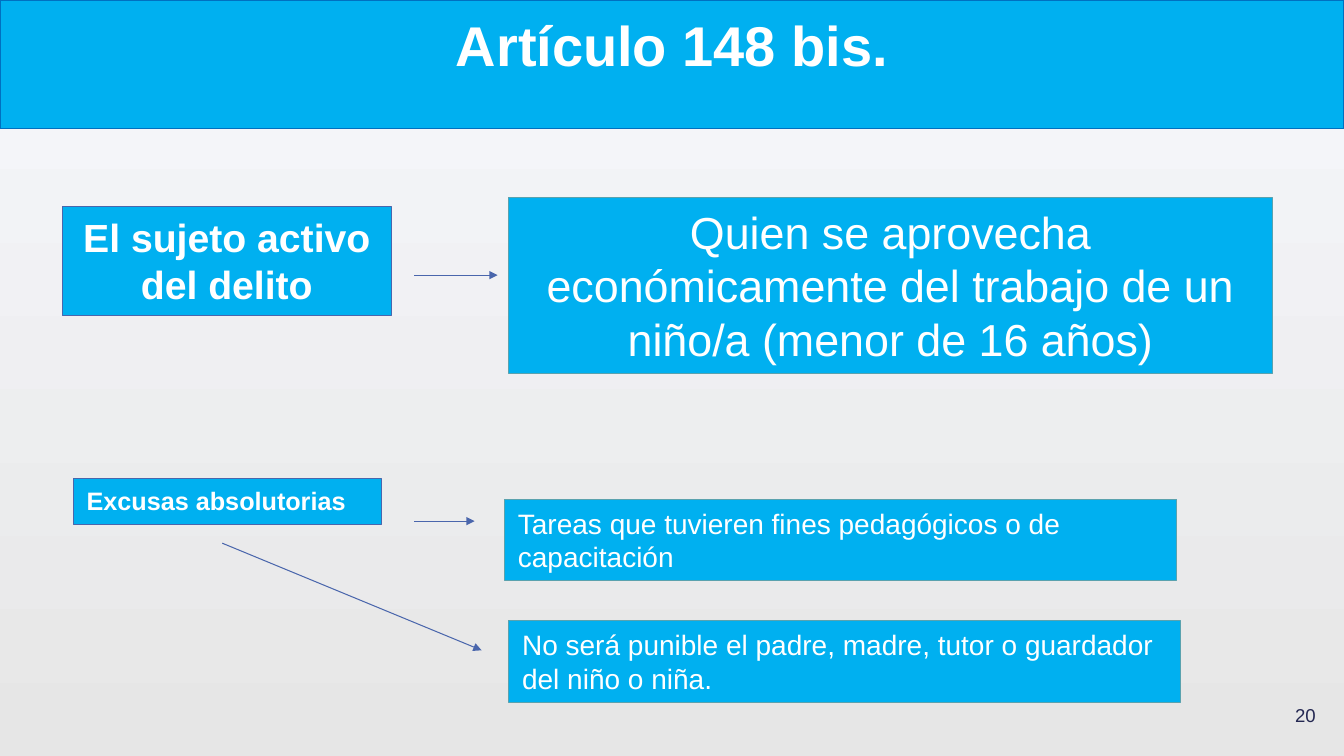
from lxml import etree
from pptx import Presentation
from pptx.dml.color import RGBColor
from pptx.enum import shapes, text
from pptx.oxml import ns
from pptx.util import Pt

COLORS = {
    "sky": "00B0F0", "navy": "4A66AC", "teal": "5AA2AE", "blue": "0070C0",
    "white": "FFFFFF", "ink": "242852", "pale": "F6F7FB", "gray": "E6E6E6",
}
LEFT, CENTER, RIGHT = text.PP_ALIGN.LEFT, text.PP_ALIGN.CENTER, text.PP_ALIGN.RIGHT


def color(name):
    return RGBColor.from_string(COLORS[name])


def write(box, wording, size, ink, bold, align, anchor, inset_x, inset_y):
    frame = box.text_frame
    frame.word_wrap = True
    frame.vertical_anchor = anchor
    frame.margin_left = frame.margin_right = Pt(inset_x)
    frame.margin_top = frame.margin_bottom = Pt(inset_y)
    paragraph = frame.paragraphs[0]
    paragraph.text = wording
    paragraph.alignment = align
    paragraph.font.name = "Arial"
    paragraph.font.size = Pt(size)
    paragraph.font.bold = bold
    paragraph.font.color.rgb = color(ink)


prs = Presentation()
prs.slide_width, prs.slide_height = Pt(960), Pt(540)
slide = prs.slides.add_slide(prs.slide_layouts[5])

backdrop = slide.background.fill
backdrop.gradient()
backdrop.gradient_angle = 270
for stop, name, position in zip(backdrop.gradient_stops, ("pale", "gray"), (0.03, 1)):
    stop.color.rgb = color(name)
    stop.position = position

heading = slide.shapes.title
heading.left, heading.top, heading.width, heading.height = Pt(0), Pt(0), Pt(960), Pt(92)
heading.fill.solid()
heading.fill.fore_color.rgb = color("sky")
heading.line.color.rgb = color("blue")
heading.line.width = Pt(0.75)
heading.text_frame.auto_size = text.MSO_AUTO_SIZE.NONE
write(heading, "Artículo 148 bis.", 40, "white", True, CENTER, text.MSO_ANCHOR.TOP, 7.2, 7.2)

page_number = slide.shapes.add_textbox(Pt(889), Pt(490), Pt(58), Pt(41))
write(page_number, "20", 13.3, "ink", False, RIGHT, text.MSO_ANCHOR.MIDDLE, 7.2, 7.2)

statements = [
    ("El sujeto activo del delito", 44.5, 147.5, 235, 78, 28, True, CENTER, "navy"),
    ("Quien se aprovecha económicamente del trabajo de un niño/a (menor de 16 años)",
     363.5, 141, 545.5, 126, 32, False, CENTER, "teal"),
    ("Excusas absolutorias", 52.5, 342, 220, 32.5, 18, True, LEFT, "navy"),
    ("Tareas que tuvieren fines pedagógicos o de capacitación",
     360.5, 356.5, 480, 58, 20, False, LEFT, "teal"),
    ("No será punible el padre, madre, tutor o guardador del niño o niña.",
     363.5, 443.5, 480, 58, 20, False, LEFT, "teal"),
]
for wording, left, top, width, height, size, bold, align, border in statements:
    statement = slide.shapes.add_textbox(Pt(left), Pt(top), Pt(width), Pt(height))
    statement.fill.solid()
    statement.fill.fore_color.rgb = color("sky")
    statement.line.color.rgb = color(border)
    statement.line.width = Pt(0.75)
    write(statement, wording, size, "white", bold, align, text.MSO_ANCHOR.TOP, 9.4, 5)
    statement.text_frame.auto_size = text.MSO_AUTO_SIZE.SHAPE_TO_FIT_TEXT

for start_x, start_y, end_x, end_y in [
    (296, 372.25, 339, 372.25),
    (158.75, 388, 344, 464.5),
    (296, 196.5, 355.5, 196.5),
]:
    arrow = slide.shapes.add_connector(
        shapes.MSO_CONNECTOR.STRAIGHT, Pt(start_x), Pt(start_y), Pt(end_x), Pt(end_y))
    arrow.line.color.rgb = color("navy")
    arrow.line.width = Pt(0.75)
    etree.SubElement(arrow.line._get_or_add_ln(), ns.qn("a:tailEnd"), type="triangle")
    etree.SubElement(arrow._element.spPr, ns.qn("a:effectLst"))

prs.save("out.pptx")
